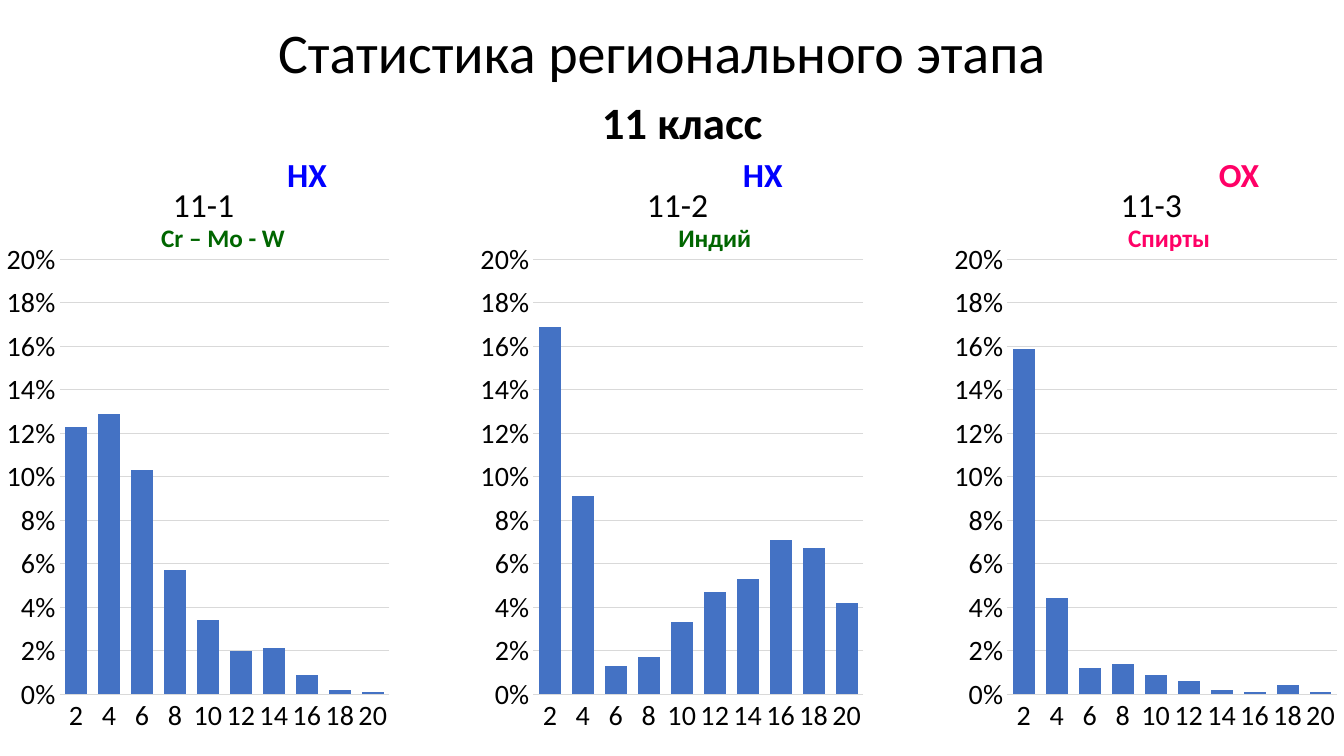
from lxml import etree
from pptx import Presentation
from pptx.chart.data import CategoryChartData
from pptx.dml.color import RGBColor
from pptx.enum.chart import XL_CHART_TYPE as ChartType, XL_TICK_MARK as TickMark
from pptx.enum.text import MSO_AUTO_SIZE as AutoSize
from pptx.oxml.ns import qn
from pptx.util import Inches, Pt

BLACK = RGBColor(0x00, 0x00, 0x00)
BLUE = RGBColor(0x00, 0x00, 0xFF)
GREEN = RGBColor(0x00, 0x66, 0x00)
PINK = RGBColor(0xFF, 0x00, 0x66)
BAR = RGBColor(0x44, 0x72, 0xC4)
GRID = RGBColor(0xD9, 0xD9, 0xD9)

SCORES = [str(score) for score in range(2, 21, 2)]
CHART_STEP = 4.7

# Each problem: number, shares, (field, left, width, colour), (topic, left, width, colour)
PROBLEMS = [
    ("11-1",
     [0.123, 0.129, 0.103, 0.057, 0.034, 0.02, 0.021, 0.009, 0.002, 0.001],
     ("НХ", 2.75, 0.6, BLUE), ("Cr – Mo - W", 1.5, 1.44, GREEN)),
    ("11-2",
     [0.169, 0.091, 0.013, 0.017, 0.033, 0.047, 0.053, 0.071, 0.067, 0.042],
     ("НХ", 7.27, 0.6, BLUE), ("Индий", 6.63, 0.93, GREEN)),
    ("11-3",
     [0.159, 0.044, 0.012, 0.014, 0.009, 0.006, 0.002, 0.001, 0.004, 0.001],
     ("ОХ", 11.99, 0.61, PINK), ("Спирты", 11.09, 1.02, PINK)),
]


class StatisticsSlide:
    font_name = "Calibri"

    def __init__(self, deck):
        self.slide = deck.slides.add_slide(deck.slide_layouts[6])

    def style(self, font, size, color=BLACK, bold=False):
        font.name = self.font_name
        font.size = Pt(size)
        font.bold = bold
        font.color.rgb = color

    def label(self, text, left, top, width, height, size, color=BLACK, bold=True):
        box = self.slide.shapes.add_textbox(
            Inches(left), Inches(top), Inches(width), Inches(height))
        frame = box.text_frame
        frame.word_wrap = False
        frame.auto_size = AutoSize.SHAPE_TO_FIT_TEXT
        run = frame.paragraphs[0].add_run()
        run.text = text
        self.style(run.font, size, color, bold)

    def place(self, parent, index, **position):
        for old in parent.findall(qn("c:layout")):
            parent.remove(old)
        layout = etree.Element(qn("c:layout"))
        manual = etree.SubElement(layout, qn("c:manualLayout"))
        for tag, value in position.items():
            etree.SubElement(manual, qn(f"c:{tag}")).set("val", str(value))
        parent.insert(index, layout)

    def histogram(self, number, shares, left):
        data = CategoryChartData(number_format="0%")
        data.categories = SCORES
        data.add_series("Series 1", shares)
        chart = self.slide.shapes.add_chart(
            ChartType.COLUMN_CLUSTERED, Inches(left), Inches(1.51),
            Inches(3.94), Inches(5.91), data).chart
        self.style(chart.font, 20)
        chart.has_legend = False

        chart.has_title = True
        heading = chart.chart_title.text_frame.paragraphs[0].add_run()
        heading.text = number
        self.style(heading.font, 24)

        plot = chart.plots[0]
        plot.gap_width = 50
        plot.vary_by_categories = False
        bars = plot.series[0].format.fill
        bars.solid()
        bars.fore_color.rgb = BAR

        score_axis, share_axis = chart.category_axis, chart.value_axis
        for axis in (score_axis, share_axis):
            axis.major_tick_mark = TickMark.NONE
            axis.minor_tick_mark = TickMark.NONE
            self.style(axis.tick_labels.font, 20)
        share_axis.minimum_scale = 0
        share_axis.maximum_scale = 0.2
        share_axis.major_unit = 0.02
        share_axis.tick_labels.number_format = "0%"
        share_axis.tick_labels.number_format_is_linked = False
        share_axis.format.line.fill.background()
        for line in (score_axis.format.line, share_axis.major_gridlines.format.line):
            line.color.rgb = GRID
            line.width = Pt(0.75)

        root = chart.element.find(qn("c:chart"))
        self.place(root.find(qn("c:title")), 1,
                   xMode="edge", yMode="edge", x=0.42, y=0.04)
        self.place(root.find(qn("c:plotArea")), 0, layoutTarget="inner",
                   xMode="edge", yMode="edge", x=0.15, y=0.18, w=0.83, h=0.73)


def main():
    deck = Presentation()
    deck.slide_width = Inches(13.33)
    deck.slide_height = Inches(7.5)
    page = StatisticsSlide(deck)
    for column, (number, shares, _, _) in enumerate(PROBLEMS):
        page.histogram(number, shares, column * CHART_STEP)
    page.label("Статистика регионального этапа", 2.66, 0.12, 8.02, 0.77, 40, bold=False)
    page.label("11 класс", 5.87, 0.89, 1.81, 0.64, 32)
    for _, _, (field, field_left, field_width, field_color), topic_label in PROBLEMS:
        topic, topic_left, topic_width, topic_color = topic_label
        page.label(field, field_left, 1.48, field_width, 0.5, 24, field_color)
        page.label(topic, topic_left, 2.16, topic_width, 0.4, 18, topic_color)
    deck.save("out.pptx")


if __name__ == "__main__":
    main()
